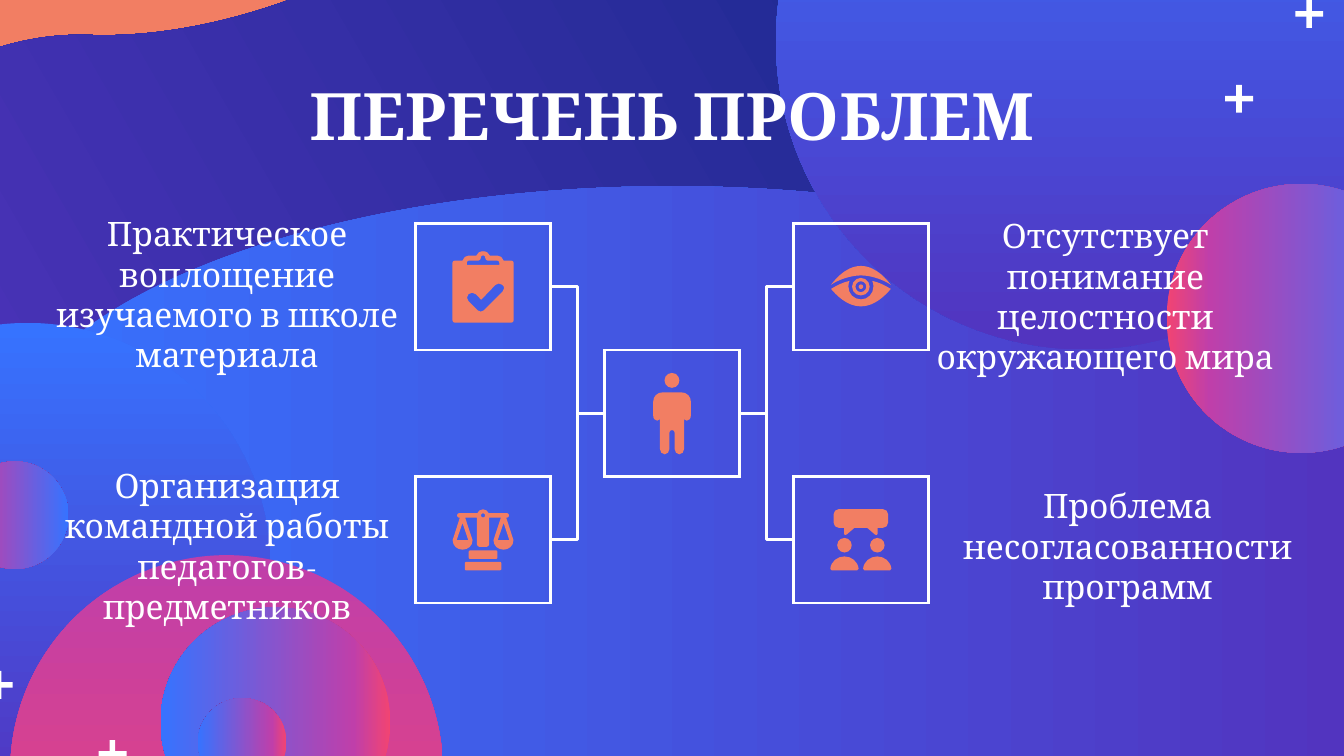
from copy import deepcopy
from math import cos, radians, sin

from lxml.etree import SubElement
from pptx import Presentation
from pptx.dml.color import RGBColor
from pptx.enum.shapes import MSO_CONNECTOR as CONN, MSO_SHAPE as SHP
from pptx.enum.text import MSO_ANCHOR, MSO_AUTO_SIZE, PP_ALIGN
from pptx.oxml.ns import qn
from pptx.util import Pt

C = {"orange": "F27E63", "white": "FFFFFF", "navy": "18298C", "purple": "5234BF",
     "blue": "3673FF", "magenta": "BF3FAA", "pink": "F24472"}
COOL = [(0, "blue"), (1, "purple")]
DARK = [(0, "navy"), (1, "purple")]
WARM = [(0, "magenta"), (1, "pink")]
NEON = [(0, "pink"), (0.16, "magenta"), (1, "blue")]
CX, CY, DX, DY = 360, 221.4, 101.2, 67.8
BOX_W, BOX_H = 72.4, 67.8

WAVE = [(405.4, -30.2), (390, -29.5, 376.6, -31, 363.6, -33.1), (319, -41, 254.2, -40.3, 171.4, -6.5),
        (128.2, 11.5, 85, 20.2, 47.5, 18.7), (25.9, 18, -2.2, 22.3, -32.4, 38.9), (-30.2, 41.8),
        (-13.7, 62, -10, 90.7, -18.7, 121.7), (-35.3, 187.9, -10.8, 243.4, 56.2, 267.8),
        (158.4, 303.8, 327.6, 252.7, 445, 149), (459.4, 136, 472.3, 123.1, 486, 108.7)]
BODY = [(0, -11.2), (-5, -11.2), (-8, -11.2, -10.1, -9, -10.1, -6.1), (-10.1, 1.1),
        (-10.1, 3, -9, 4, -7.9, 4), (-7.2, 4, -6.8, 3.6, -6.5, 3.2), (-6.5, 19.1),
        (-6.5, 20.7, -5.3, 22, -3.9, 22), (-2.5, 22, -1.4, 20.7, -1.4, 19.1), (-1.4, 10.4),
        (-1.4, 9.6, -0.8, 9, 0, 9)]
BUBBLE = [(0, -16.4), (-11.9, -16.4), (-13.4, -16.4, -14.6, -15.2, -14.6, -13.6), (-14.6, -9.2),
          (-14.6, -7.6, -13.4, -6.4, -11.9, -6.4), (-9, -6.4), (-9, -3.2),
          (-9, -2.6, -8.2, -2.2, -7.6, -2.8), (-3.4, -6.4), (0, -6.4)]
BUST = [(0, 8.9), (-3.8, 8.9, -7.2, 11.6, -7.6, 15.5), (-7.7, 16, -7.4, 16.4, -6.8, 16.4), (0, 16.4)]
BALANCE = [(0, -16.3), (-1.4, -16.3, -2.6, -15.4, -3.1, -14.2), (-13, -14.2),
           (-14.2, -14.2, -14.2, -11.9, -13, -11.9), (-12.4, -11.9), (-16.3, 0.2),
           (-16.3, 3.3, -13.8, 5.3, -11, 5.3), (-8, 5.3, -5.6, 3.3, -5.6, 0.2), (-9.6, -11.9),
           (-3.3, -11.9), (-3.3, 2.4), (-3.3, 3.2, -2.6, 3.8, -1.9, 3.8), (0, 3.8)]
PIVOT = [(0, -14.2), (-1.5, -14.2, -1.5, -11.9, 0, -11.9)]
LEFT_PAN, RIGHT_PAN = [[(x, -9), (x + 3.1, 0.2), (x - 3.1, 0.2)] for x in (-11, 11)]
BOARD = [(0, -19), (-1.8, -19, -3.2, -18, -3.6, -16.7), (-7.6, -16.7),
         (-9.2, -16.7, -10.6, -15.6, -11, -14), (-15, -14), (-15.8, -14, -16.4, -13.5, -16.4, -12.8),
         (-16.4, 18), (-16.4, 18.8, -15.8, 19.3, -15, 19.3), (0, 19.3)]
CLIP = [(0, -16.8), (-0.8, -16.8, -1.2, -16.2, -1.2, -15.4), (-1.2, -14.6, -1.8, -14, -2.4, -14),
        (-7.6, -14), (-8.2, -14, -8.7, -13.5, -8.7, -12.9), (-8.7, -11.7), (0, -11.7)]
CHECK = [(8.4, -1.7), (9.1, -1.7, 9.8, -1.5, 10.3, -1), (11.6, 0, 11.6, 1.6, 10.4, 2.7), (0.4, 12.7),
         (-0.4, 13.6, -1.9, 13.6, -2.9, 12.7), (-7.7, 7.9), (-8.9, 6.8, -8.9, 5, -7.8, 4),
         (-6.8, 3, -5, 3, -3.9, 4), (-1, 7), (6.6, -0.9), (7.1, -1.4, 7.7, -1.7, 8.4, -1.7)]
LID = [(0, -11.1), (-8.8, -11.1, -15, -2.2, -16, -1), (-13, -3.2, -6, -6, 0, -6)]
EYEBALL = [(0, 10.6), (-7.5, 10.6, -13.5, 4.2, -16, 1.2), (-12.5, -0.9, -9.5, -2.4, -6.1, -3.1),
           (-6.6, -2, -6.7, -1, -6.7, 0), (-6.7, 3.8, -3.8, 6.8, 0, 6.8)]

def rgb(name):
    return RGBColor.from_string(C[name])

def pairs(step):
    return list(zip(step[::2], step[1::2]))

def mirrored(half):
    steps = list(half)
    for before, step in zip(half[-2::-1], half[:0:-1]):
        nodes = pairs(step)[-2::-1] + [before[-2:]]
        steps.append(tuple(v for x, y in nodes for v in (-x, y)))
    return steps

def turned(steps, angle):
    c, n = cos(radians(angle)), sin(radians(angle))
    return [tuple(v for x, y in pairs(step) for v in (x * c - y * n, x * n + y * c)) for step in steps]

def paint(sp, color):
    sp.shadow.inherit = False
    sp.line.fill.background()
    sp.fill.solid()
    sp.fill.fore_color.rgb = rgb(color)
    return sp

def gradient(sp, stops, angle):
    sp.fill.gradient()
    sp.fill.gradient_angle = (360 - angle) % 360
    if len(stops) == 3:
        first = sp._element.spPr.find(".//" + qn("a:gs"))
        first.addnext(deepcopy(first))
    for gs, (pos, color) in zip(sp.fill.gradient_stops, stops):
        gs.position = pos
        gs.color.rgb = rgb(color)

def shape(s, kind, x, y, w, h, color="orange"):
    return paint(s.shapes.add_shape(kind, Pt(x), Pt(y), Pt(w), Pt(h)), color)

def outline(s, x, y, contours):
    builder = s.shapes.build_freeform(*map(Pt, contours[0][0]))
    for i, steps in enumerate(contours):
        if i:
            builder.move_to(*map(Pt, steps[0]))
        builder.add_line_segments([tuple(map(Pt, step[-2:])) for step in steps[1:]], close=True)
    sp = builder.convert_to_shape(Pt(x), Pt(y))
    nodes = [n for n in sp._element.spPr.find(".//" + qn("a:path")) if n.tag != qn("a:close")]
    for node, step in zip(nodes, [step for steps in contours for step in steps]):
        if len(step) == 6:
            node.tag = qn("a:cubicBezTo")
            for i, (px, py) in enumerate(pairs(step)[:2]):
                pt = deepcopy(node[-1])
                pt.set("x", str(Pt(px) - builder.shape_offset_x))
                pt.set("y", str(Pt(py) - builder.shape_offset_y))
                node.insert(i, pt)
    return paint(sp, "orange")

def backdrop(s):
    s.background.fill.solid()
    s.background.fill.fore_color.rgb = rgb("orange")
    wave = outline(s, 0, 0, [turned(WAVE, -60)])
    middle = (wave.left + wave.width / 2, wave.top + wave.height / 2)
    [(mx, my)] = turned([middle], 60)
    wave.left, wave.top, wave.rotation = int(mx - wave.width / 2), int(my - wave.height / 2), 60
    gradient(wave, DARK, 90)
    hill = shape(s, SHP.FLOWCHART_DELAY, 207.4, -110.5, 305.3, 725.8)
    hill.rotation = 270
    gradient(hill, COOL, 90)
    for x, y, d, stops, angle in [
            (415.7, -143.3, 330.5, COOL, 90), (-115.2, 173, 259.9, COOL, 90), (-20.9, 247.2, 57.6, NEON, 0),
            (5.5, 297.4, 231.8, WARM, 90), (625, 98.6, 144, NEON, 0), (86, 325.4, 123.1, NEON, 180),
            (106, 374, 47.5, NEON, 180)]:
        gradient(shape(s, SHP.OVAL, x, y, d, d), stops, angle)
    for x, y in [(663.8, 52.9), (-0.7, 366.9), (60.3, 404), (701.4, 7.5)]:
        for w, h in [(3, 15), (15, 3)]:
            shape(s, SHP.RECTANGLE, x - w / 2, y - h / 2, w, h, "white")

def frame(s, x, y):
    sp = shape(s, SHP.RECTANGLE, x - BOX_W / 2, y - BOX_H / 2, BOX_W, BOX_H)
    sp.fill.background()
    sp.line.color.rgb = rgb("white")
    sp.line.width = Pt(1.5)
    SubElement(sp._element.spPr.find(qn("a:ln")), qn("a:miter"), lim="800000")
    return sp

def link(s, hub, box, on_left):
    cn = s.shapes.add_connector(CONN.ELBOW, 0, 0, 0, 0)
    cn.begin_connect(hub, 1 if on_left else 3)
    cn.end_connect(box, 3 if on_left else 1)
    cn.line.color.rgb = rgb("white")
    cn.line.width = Pt(1.5)
    SubElement(cn._element.spPr, qn("a:effectLst"))

def icon(s, x, y, outlines, presets=()):
    for dx, contours in outlines:
        outline(s, x + dx, y, contours)
    for kind, left, top, w, h in presets:
        sp = shape(s, kind, x + left, y + top, w, h)
        if kind == SHP.DONUT:
            sp.adjustments[0] = 0.19

def write(sp, text, x, y, w, h, size=18, bold=False, after=16):
    sp.left, sp.top, sp.width, sp.height = Pt(x), Pt(y), Pt(w), Pt(h)
    tf = sp.text_frame
    tf.word_wrap = True
    tf.auto_size = MSO_AUTO_SIZE.NONE
    tf.vertical_anchor = MSO_ANCHOR.MIDDLE
    tf.margin_left = tf.margin_right = tf.margin_top = tf.margin_bottom = Pt(7.2)
    p = tf.paragraphs[0]
    p.text = text
    p.alignment = PP_ALIGN.CENTER
    p.space_before, p.space_after = Pt(0), Pt(after)
    p.font.name, p.font.size, p.font.bold = "Cambria", Pt(size), bold
    p.font.color.rgb = rgb("white")
    sp._element.getparent().append(sp._element)

def main():
    prs = Presentation()
    prs.slide_width, prs.slide_height = Pt(720), Pt(405)
    s = prs.slides.add_slide(prs.slide_layouts[0])
    backdrop(s)
    write(s.shapes.title, "ПЕРЕЧЕНЬ ПРОБЛЕМ", 56.5, 42, 607, 38.2, 35, True, 0)
    hub = frame(s, CX, CY)
    icon(s, CX, CY, [(0, [mirrored(BODY)])], [(SHP.OVAL, -4, -21.6, 8, 8)])
    eye = ([(0, [mirrored(LID)]), (0, [mirrored(EYEBALL)])],
           [(SHP.OVAL, -1.2, -1.2, 2.4, 2.4), (SHP.DONUT, -4.7, -4.7, 9.4, 9.4)])
    team = ([(0, [mirrored(BUBBLE)])] + [(dx, [mirrored(BUST)]) for dx in (-8.8, 8.8)],
            [(SHP.OVAL, dx - 3.9, -1, 7.8, 7.8) for dx in (-8.8, 8.8)])
    clipboard = ([(0, [mirrored(BOARD), mirrored(CLIP), CHECK])],)
    scales = ([(0, [mirrored(BALANCE), mirrored(PIVOT), LEFT_PAN, RIGHT_PAN])],
              [(SHP.ROUNDED_RECTANGLE, -w / 2, top, w, 4.6) for w, top in [(19.6, 11.8), (15.4, 5.7)]])
    for col, row, parts, x, y, text in [
            (1, -1, eye, 491, 118.6, "Отсутствует понимание целостности окружающего мира"),
            (1, 1, team, 502.9, 252.3, "Проблема несогласованности программ"),
            (-1, -1, clipboard, 20.5, 117.4, "Практическое воплощение изучаемого в школе материала"),
            (-1, 1, scales, 20.5, 252.3, "Организация командной работы педагогов-предметников")]:
        cx, cy = CX + col * DX, CY + row * DY
        link(s, hub, frame(s, cx, cy), col < 0)
        icon(s, cx, cy, *parts)
        sp = s.placeholders[1] if parts is eye else s.shapes.add_textbox(0, 0, 0, 0)
        write(sp, text, x, y, 202.3, 79.9)
    prs.save("out.pptx")

if __name__ == "__main__":
    main()
